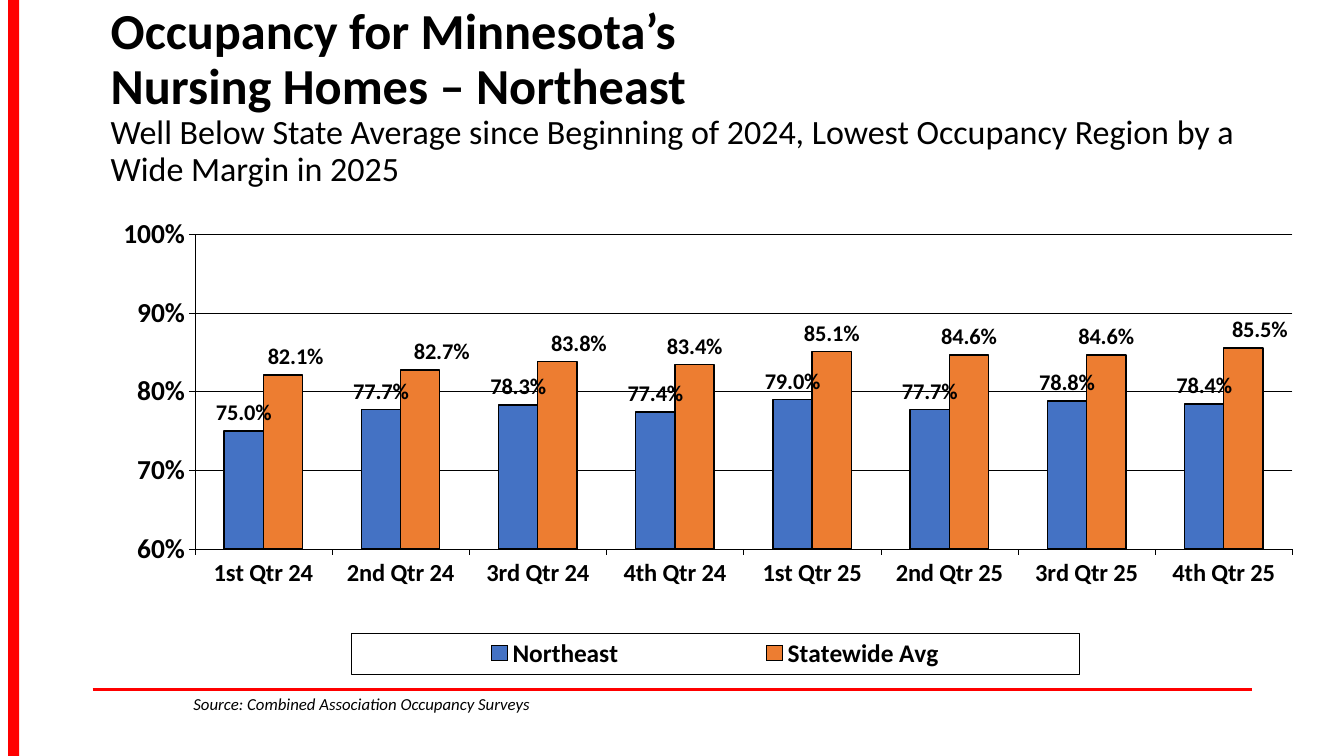
from lxml import etree
from pptx import Presentation
from pptx.chart.data import CategoryChartData
from pptx.dml.color import RGBColor
from pptx.enum.chart import XL_CHART_TYPE, XL_LABEL_POSITION, XL_LEGEND_POSITION, XL_TICK_MARK
from pptx.enum.shapes import MSO_CONNECTOR, MSO_SHAPE
from pptx.enum.text import MSO_ANCHOR, MSO_AUTO_SIZE
from pptx.oxml import parse_xml
from pptx.oxml.ns import nsdecls, qn
from pptx.util import Inches, Pt

RED = RGBColor(0xFF, 0x00, 0x00)
BLACK = RGBColor(0x00, 0x00, 0x00)
BLUE = RGBColor(0x44, 0x72, 0xC4)
ORANGE = RGBColor(0xED, 0x7D, 0x31)
FONT = "Calibri"
OUTSIDE_END = XL_LABEL_POSITION.OUTSIDE_END
TICK_OUT = XL_TICK_MARK.OUTSIDE


def style_font(font, size, bold=False, italic=False):
    font.name = FONT
    font.size = Pt(size)
    font.bold = bold
    font.italic = italic
    font.color.rgb = BLACK


def place(parent, index, **settings):
    for old in parent.findall(qn("c:layout")):
        parent.remove(old)
    layout = parse_xml(f"<c:layout {nsdecls('c')}><c:manualLayout/></c:layout>")
    for tag, value in settings.items():
        etree.SubElement(layout[0], qn(f"c:{tag}")).set("val", str(value))
    parent.insert(index, layout)


deck = Presentation()
deck.slide_width = Inches(13.33)
deck.slide_height = Inches(7.5)
page = deck.slides.add_slide(deck.slide_layouts[6])

rule = page.shapes.add_connector(
    MSO_CONNECTOR.STRAIGHT, Inches(0.92), Inches(6.84), Inches(12.42), Inches(6.84))
rule.line.color.rgb = RED
rule.line.width = Pt(2)
etree.SubElement(rule._element.spPr, qn("a:effectLst"))

side_bar = page.shapes.add_shape(
    MSO_SHAPE.RECTANGLE, Inches(0.08), 0, Inches(0.11), Inches(7.5))
side_bar.shadow.inherit = False
side_bar.fill.solid()
side_bar.fill.fore_color.rgb = RED
side_bar.line.fill.background()

title = page.shapes.add_textbox(Inches(1), Inches(0.24), Inches(11.5), Inches(1.45))
title.text_frame.word_wrap = True
title.text_frame.auto_size = MSO_AUTO_SIZE.NONE
title.text_frame.vertical_anchor = MSO_ANCHOR.MIDDLE
para = title.text_frame.paragraphs[0]
para.text = (
    "Occupancy for Minnesota’s \vNursing Homes – Northeast\v"
    "Well Below State Average since Beginning of 2024, "
    "Lowest Occupancy Region by a Wide Margin in 2025")
para.line_spacing = 0.9
for span, size, bold in zip(para.runs, (36, 36, 24.3), (True, True, False)):
    style_font(span.font, size, bold)

data = CategoryChartData(number_format="0.0%")
data.categories = [
    f"{quarter} Qtr {year}" for year in (24, 25) for quarter in ("1st", "2nd", "3rd", "4th")]
data.add_series("Northeast", (0.75, 0.777, 0.783, 0.774, 0.79, 0.777, 0.788, 0.784))
data.add_series("Statewide Avg", (0.821, 0.827, 0.838, 0.834, 0.851, 0.846, 0.846, 0.855))
chart = page.shapes.add_chart(
    XL_CHART_TYPE.COLUMN_CLUSTERED, Inches(0.29), Inches(1.86),
    Inches(12.53), Inches(4.86), data).chart
chart.has_title = False
style_font(chart.font, 19.6, True)

for axis, size in ((chart.category_axis, 17.5), (chart.value_axis, 19.6)):
    style_font(axis.tick_labels.font, size, True)
    axis.major_tick_mark = TICK_OUT
    axis.format.line.color.rgb = BLACK
    axis.format.line.width = Pt(0.27)
value_axis = chart.value_axis
value_axis.minimum_scale = 0.6
value_axis.maximum_scale = 1
value_axis.major_unit = 0.1
value_axis.tick_labels.number_format = "0%"
value_axis.tick_labels.number_format_is_linked = False
value_axis.major_gridlines.format.line.color.rgb = BLACK
value_axis.major_gridlines.format.line.width = Pt(0.27)

plot = chart.plots[0]
plot.gap_width = 150
plot.overlap = 0
plot.vary_by_categories = False
place(plot._element.getparent(), 0, layoutTarget="inner", xMode="edge", yMode="edge",
      x=0.131, y=0.095, w=0.869, h=0.643)

for series, color in zip(plot.series, (BLUE, ORANGE)):
    series.format.fill.solid()
    series.format.fill.fore_color.rgb = color
    series.format.line.color.rgb = BLACK
    series.format.line.width = Pt(1.09)
    labels = series.data_labels
    labels.show_value = True
    labels.position = OUTSIDE_END
    labels.number_format = "0.0%"
    labels.number_format_is_linked = False
    style_font(labels.font, 16, True)

statewide = plot.series[1]
for point, shift in {0: 0.01, 1: 0.017, 2: 0.017, 7: 0.013}.items():
    label = statewide.points[point].data_label
    style_font(label.font, 16, True)
    label.position = OUTSIDE_END
    label_xml = statewide.data_labels._element.find(f"{qn('c:dLbl')}[{qn('c:idx')}][last()]")
    place(label_xml, 1, x=shift, y=0)

chart.has_legend = True
legend = chart.legend
legend.position = XL_LEGEND_POSITION.BOTTOM
legend.include_in_layout = False
style_font(legend.font, 18.1, True)
place(legend._element, 1, xMode="edge", yMode="edge", x=0.255, y=0.909, w=0.576, h=0.084)
legend_border = parse_xml(
    f'<c:spPr {nsdecls("c", "a")}><a:ln w="3429"><a:solidFill>'
    f'<a:srgbClr val="{BLACK}"/></a:solidFill></a:ln></c:spPr>')
legend._element.find(qn("c:txPr")).addprevious(legend_border)

source = page.shapes.add_textbox(Inches(1.82), Inches(6.83), Inches(5.27), Inches(0.5))
source.text_frame.word_wrap = True
source.text_frame.text = "Source: Combined Association Occupancy Surveys"
style_font(source.text_frame.paragraphs[0].runs[0].font, 12, italic=True)

deck.save("out.pptx")
